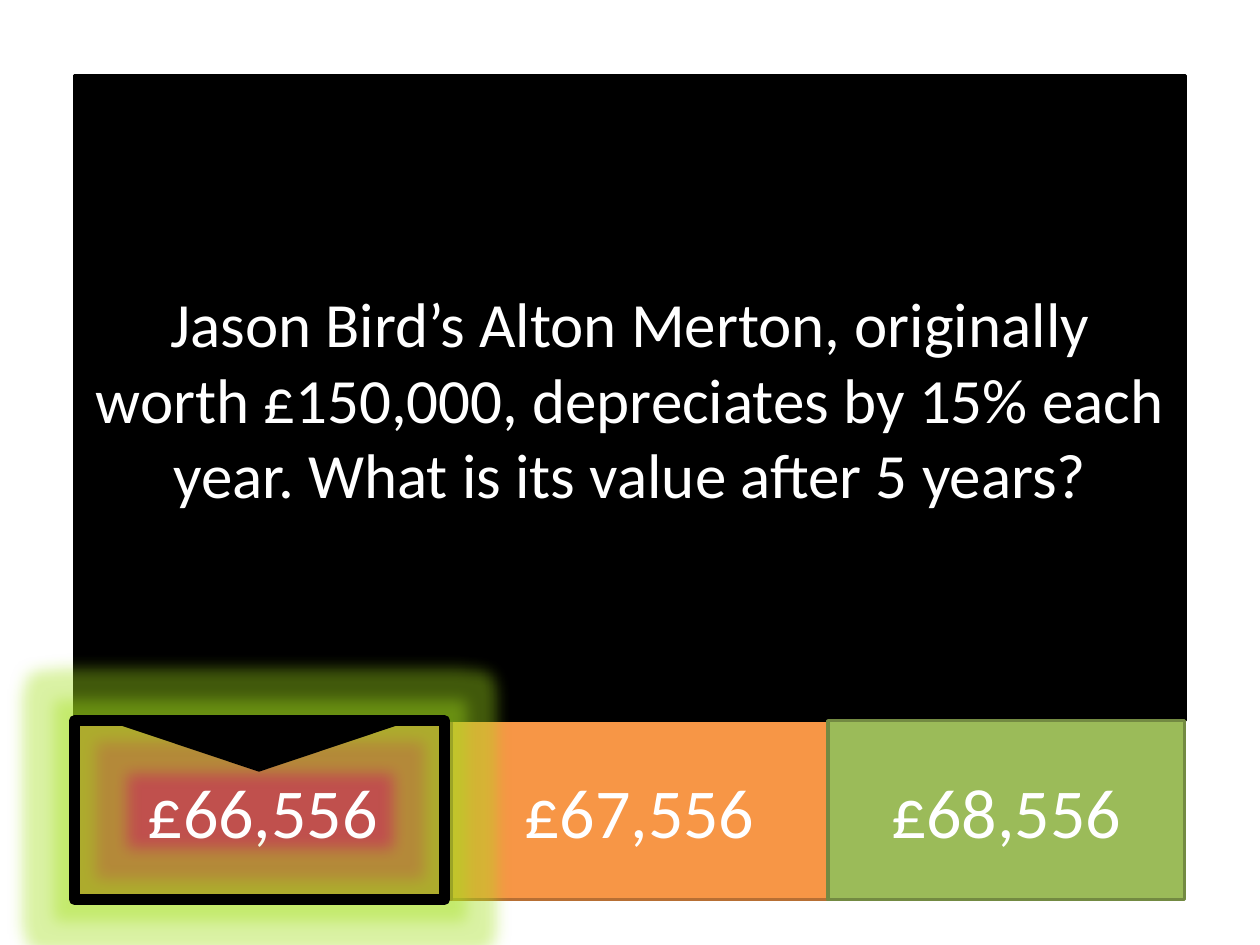
import dataclasses

import pptx
import pptx.dml.color
import pptx.enum.shapes
import pptx.enum.text
import pptx.oxml
import pptx.util

Inches = pptx.util.Inches
Pt = pptx.util.Pt
Kind = pptx.enum.shapes.MSO_SHAPE


@dataclasses.dataclass(frozen=True)
class Theme:
    font: str = "Calibri"
    black: str = "000000"
    white: str = "FFFFFF"
    red: tuple = ("C0504D", "8E3B39")
    orange: tuple = ("F79646", "B76F34")
    green: tuple = ("9BBB59", "738A42")
    glow: str = "A4E01C"
    ask: int = 36
    reply: int = 40
    edge: int = 2
    frame: int = 6
    halo: int = 18


THEME = Theme()
LEFT, TOP = 0.59, 0.6
BASE, HIGH = 5.72, 1.42
WIDE = 2.99


def color(code):
    return pptx.dml.color.RGBColor.from_string(code)


def write(shape, text, size, tint=THEME.white):
    frame = shape.text_frame
    frame.word_wrap = True
    frame.vertical_anchor = pptx.enum.text.MSO_ANCHOR.MIDDLE
    para = frame.paragraphs[0]
    para.alignment = pptx.enum.text.PP_ALIGN.CENTER
    run = para.add_run()
    run.text = text
    run.font.name = THEME.font
    run.font.size = Pt(size)
    run.font.color.rgb = color(tint)


def block(shapes, box, fill, line, width=THEME.edge, kind=Kind.RECTANGLE):
    shape = shapes.add_shape(kind, *map(Inches, box))
    shape.shadow.inherit = False
    if fill:
        shape.fill.solid()
        shape.fill.fore_color.rgb = color(fill)
    else:
        shape.fill.background()
    shape.line.color.rgb = color(line)
    shape.line.width = Pt(width)
    return shape


def glow(shape):
    space = "http://schemas.openxmlformats.org/drawingml/2006/main"
    halo = pptx.oxml.parse_xml(
        f'<a:glow xmlns:a="{space}" rad="{Pt(THEME.halo)}">'
        f'<a:srgbClr val="{THEME.glow}"><a:alpha val="40000"/></a:srgbClr>'
        '</a:glow>')
    shape._element.spPr.find(f"{{{space}}}effectLst").append(halo)


def answer(slide, text, left, hue, width=WIDE):
    shape = block(slide.shapes, (left, BASE, width, HIGH), *hue)
    write(shape, text, THEME.reply)


def marker(slide):
    group = slide.shapes.add_group_shape()
    frame = block(group.shapes, (LEFT, BASE, 2.94, HIGH), None,
                  THEME.black, THEME.frame)
    glow(frame)
    arrow = block(group.shapes, (0.89, BASE, 2.33, 0.39), THEME.black,
                  THEME.black, kind=Kind.ISOSCELES_TRIANGLE)
    arrow.rotation = 180


def main():
    deck = pptx.Presentation()
    deck.slide_width, deck.slide_height = Inches(10), Inches(7.5)
    slide = deck.slides.add_slide(deck.slide_layouts[6])
    answer(slide, "£67,556", LEFT + WIDE, THEME.orange)
    answer(slide, "£66,556", LEFT, THEME.red)
    panel = block(slide.shapes, (LEFT, TOP, 8.82, BASE - TOP),
                  THEME.black, THEME.black)
    write(panel, "Jason Bird’s Alton Merton, originally worth £150,000, "
          "depreciates by 15% each year. What is its value after 5 years?",
          THEME.ask)
    answer(slide, "£68,556", LEFT + 2 * WIDE, THEME.green, 2.83)
    marker(slide)
    deck.save("out.pptx")


if __name__ == "__main__":
    main()
